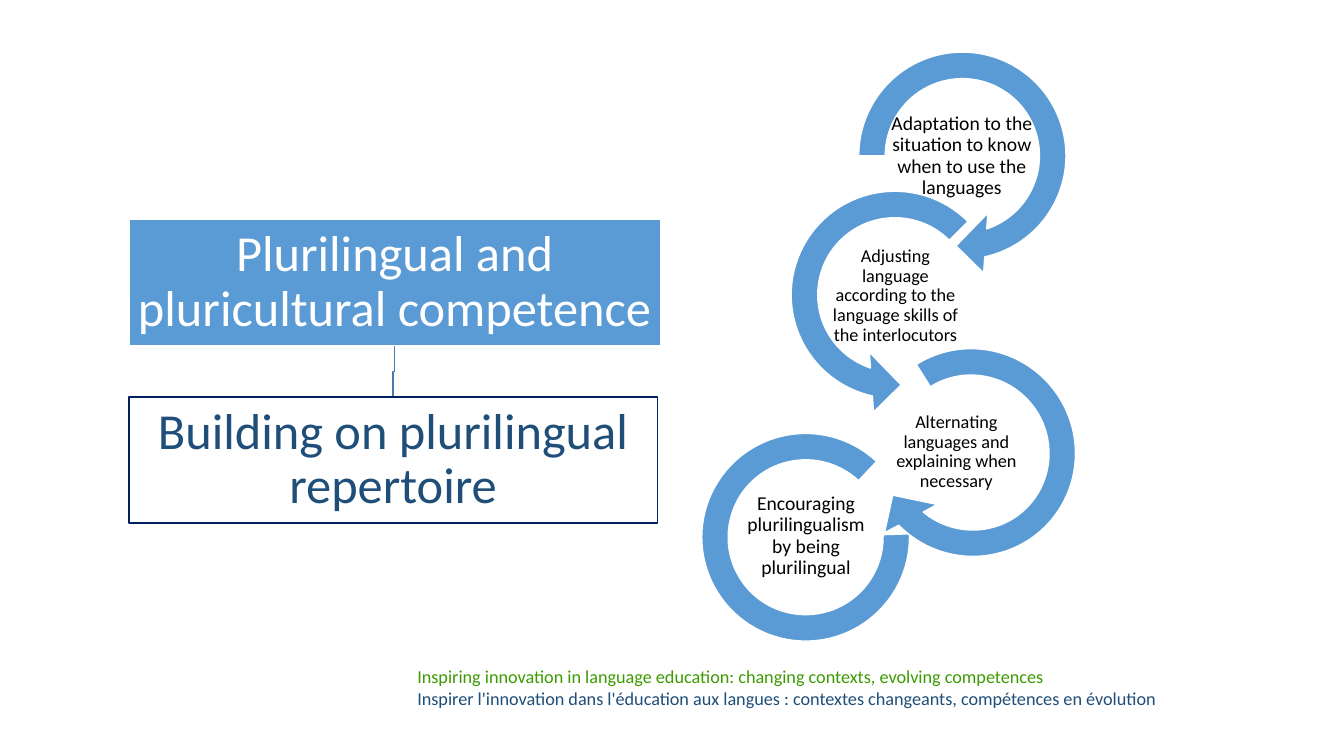
from pptx import Presentation
from pptx.dml.color import RGBColor
from pptx.enum.shapes import MSO_SHAPE as SHAPE
from pptx.enum.text import MSO_ANCHOR as ANCHOR, PP_ALIGN as ALIGN
from pptx.util import Inches, Pt

BLUE, NAVY, DARK_BLUE = "5B9BD5", "002060", "1F4E79"
WHITE, BLACK, GREEN = "FFFFFF", "000000", "3C9B00"

ARROW_ADJ = (0.11, 11.423, 45, 108, 0.125)
LEFT_ARROW_ADJ = (0.11, 11.423, 63, 189, 0.125)
ARC_ADJ = (135, 108, 0.127)

# shape, left, top, width, height, rotation, adjustments (relative to the chain's box)
RINGS = [
    (SHAPE.CIRCULAR_ARROW, 1.39, 0, 2.39, 2.39, 0, ARROW_ADJ),
    (SHAPE.LEFT_CIRCULAR_ARROW, 0.72, 1.38, 2.39, 2.39, 0, LEFT_ARROW_ADJ),
    (SHAPE.BLOCK_ARC, 0, 3.95, 2.06, 2.06, 133.1, ARC_ADJ),
    (SHAPE.CIRCULAR_ARROW, 1.48, 2.95, 2.4, 2.38, 57.7, ARROW_ADJ),
]
# text, size, left, top, width, height (relative to the chain's box)
RING_LABELS = [
    ("Adaptation to the situation to know when to use the languages",
     14, 1.87, 0.65, 1.42, 1.1),
    ("Adjusting language according to the language skills of the interlocutors",
     13, 1.26, 1.83, 1.32, 1.51),
    ("Alternating languages and explaining when necessary",
     13, 1.9, 3.56, 1.25, 1.15),
    ("Encouraging plurilingualism by being plurilingual",
     14, 0.37, 4.64, 1.33, 0.66),
]


def rgb(color):
    return RGBColor.from_string(color)


def style_run(r, size, color):
    r.font.name = "Calibri"
    r.font.size = Pt(size)
    r.font.color.rgb = rgb(color)


def style_shape(sp, fill, line):
    sp.shadow.inherit = False
    sp.fill.solid()
    sp.fill.fore_color.rgb = rgb(fill)
    sp.line.color.rgb = rgb(line)
    sp.line.width = Pt(1)


def set_label(sp, text, size, color, inset):
    """Write one centred paragraph in the middle of a shape."""
    tf = sp.text_frame
    tf.word_wrap = True
    tf.vertical_anchor = ANCHOR.MIDDLE
    tf.margin_left = tf.margin_right = tf.margin_top = tf.margin_bottom = Inches(inset)
    p = tf.paragraphs[0]
    p.text = text
    p.alignment = ALIGN.CENTER
    p.line_spacing = 0.9
    style_run(p.runs[0], size, color)


def add_hierarchy(slide, left, top):
    """Two stacked boxes joined by a stepped line."""
    height, gap = 1.25, 0.51
    boxes = [
        ("Plurilingual and pluricultural competence", 5.27, BLUE, WHITE, WHITE),
        ("Building on plurilingual repertoire", 5.24, WHITE, NAVY, DARK_BLUE),
    ]
    x1, x2 = (Inches(left + width / 2) for _, width, *_ in boxes)
    y1, y2 = Inches(top + height), Inches(top + height + gap)
    middle = (y1 + y2) // 2
    builder = slide.shapes.build_freeform(x1, y1)
    builder.add_line_segments([(x1, middle), (x2, middle), (x2, y2)], close=False)
    link = builder.convert_to_shape()
    link.shadow.inherit = False
    link.fill.background()
    link.line.color.rgb = rgb("497CAB")
    link.line.width = Pt(1)

    for i, (text, width, fill, line, color) in enumerate(boxes):
        sp = slide.shapes.add_shape(
            SHAPE.RECTANGLE, Inches(left), Inches(top + i * (height + gap)),
            Inches(width), Inches(height))
        style_shape(sp, fill, line)
        set_label(sp, text, 36, color, 0.03)


def add_ring_chain(slide, left, top):
    for kind, x, y, width, height, rotation, adjustments in RINGS:
        sp = slide.shapes.add_shape(
            kind, Inches(left + x), Inches(top + y), Inches(width), Inches(height))
        sp.rotation = rotation
        for i, value in enumerate(adjustments):
            sp.adjustments[i] = value
        style_shape(sp, BLUE, WHITE)
    for text, size, x, y, width, height in RING_LABELS:
        label = slide.shapes.add_textbox(
            Inches(left + x), Inches(top + y), Inches(width), Inches(height))
        set_label(label, text, size, BLACK, 0.01)


def add_footer(slide, left, top, width, height):
    tf = slide.shapes.add_textbox(
        Inches(left), Inches(top), Inches(width), Inches(height)).text_frame
    tf.word_wrap = True
    p = tf.paragraphs[0]
    p.text = ("Inspiring innovation in language education: "
              "changing contexts, evolving competences\v"
              "Inspirer l'innovation dans l'éducation aux langues : "
              "contextes changeants, compétences en évolution")
    for r, color in zip(p.runs, (GREEN, DARK_BLUE)):
        style_run(r, 13, color)


def main():
    prs = Presentation()
    prs.slide_width, prs.slide_height = Inches(13.33), Inches(7.5)
    slide = prs.slides.add_slide(prs.slide_layouts[6])
    add_footer(slide, 4.04, 6.55, 7.92, 0.54)
    add_hierarchy(slide, 1.28, 2.18)
    add_ring_chain(slide, 6.96, 0.35)
    prs.save("out.pptx")


if __name__ == "__main__":
    main()
